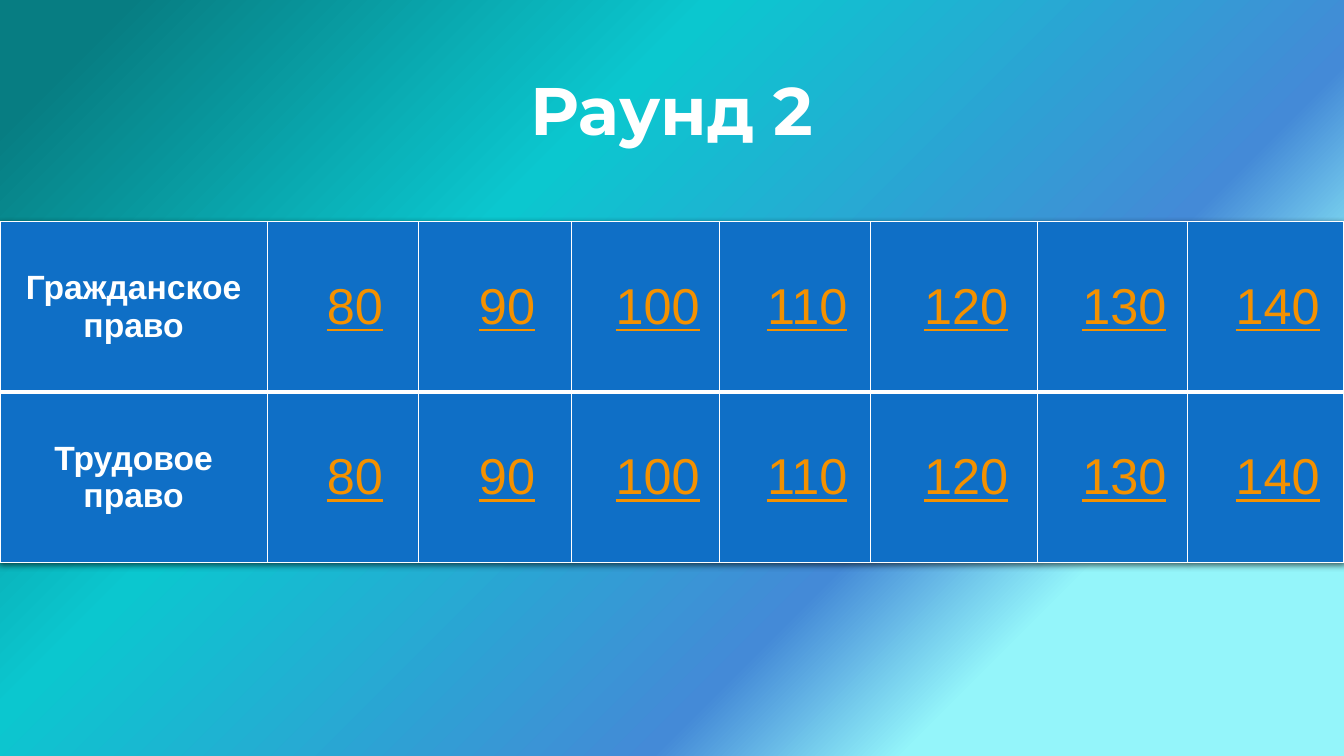
from lxml.etree import SubElement
from pptx import Presentation
from pptx.dml.color import RGBColor
from pptx.enum.text import MSO_ANCHOR, PP_ALIGN
from pptx.oxml import parse_xml
from pptx.oxml.ns import nsdecls, qn
from pptx.util import Pt

COLORS = {
    "white": "FFFFFF", "cell": "0F6FC6", "score": "F49100", "shadow": "000000",
    "ice": "94F5FA", "blue": "448AD7", "cyan": "0BC7CF", "teal": "077D82",
}
BACKDROP = [(21, "ice"), (33, "blue"), (66, "cyan"), (94, "teal")]
TOPICS = ["Гражданское право", "Трудовое право"]
SCORES = range(80, 141, 10)
COL_WIDTHS = [190.8, 108, 109.44, 105.84, 108, 118.8, 107.28, 111.6]
ROW_HEIGHT = 121.68


class Board:
    def __init__(self, prs):
        self.s = prs.slides.add_slide(prs.slide_layouts[6])

    def background(self, stops):
        """Fill the slide with a gradient that starts at its bottom right corner."""
        self.s.background.fill.gradient()
        grad = self.s.element.xpath(".//p:bgPr/a:gradFill")[0]
        gs = "".join(
            f'<a:gs pos="{pos * 1000}"><a:srgbClr val="{COLORS[name]}"/></a:gs>'
            for pos, name in stops)
        grad.getparent().replace(grad, parse_xml(
            f'<a:gradFill {nsdecls("a")} rotWithShape="1"><a:gsLst>{gs}</a:gsLst>'
            '<a:path path="circle"><a:fillToRect l="100000" t="100000"/></a:path>'
            '</a:gradFill>'))

    def label(self, tf, text, size, color, font="Arial", bold=False, underline=False):
        tf.text = text
        p = tf.paragraphs[0]
        p.alignment = PP_ALIGN.CENTER
        f = p.runs[0].font
        f.name, f.size, f.bold, f.underline = font, Pt(size), bold, underline
        f.color.rgb = RGBColor.from_string(COLORS[color])
        return p

    def title(self, text, left, top, width, height):
        tf = self.s.shapes.add_textbox(Pt(left), Pt(top), Pt(width), Pt(height)).text_frame
        tf.word_wrap = True
        tf.vertical_anchor = MSO_ANCHOR.MIDDLE
        p = self.label(tf, text, 48, "white", "Montserrat", bold=True)
        p.line_spacing = 0.9

    def borders(self, cell, widths):
        tcPr = cell._tc.get_or_add_tcPr()
        for i, (side, width) in enumerate(widths.items()):
            tcPr.insert(i, parse_xml(
                f'<a:ln{side} {nsdecls("a")} w="{Pt(width)}"><a:solidFill>'
                f'<a:srgbClr val="{COLORS["white"]}"/></a:solidFill></a:ln{side}>'))

    def shadow(self, table):
        effects = SubElement(table._tbl.tblPr, qn("a:effectLst"))
        effects.append(parse_xml(
            f'<a:outerShdw {nsdecls("a")} blurRad="{Pt(4.5)}" dist="{Pt(1.5)}" '
            f'dir="5400000"><a:srgbClr val="{COLORS["shadow"]}">'
            '<a:alpha val="63000"/></a:srgbClr></a:outerShdw>'))
        table._tbl.tblPr.insert(0, effects)

    def score_table(self, topics, scores, top):
        rows, cols = len(topics), len(COL_WIDTHS)
        table = self.s.shapes.add_table(
            rows, cols, 0, Pt(top), Pt(sum(COL_WIDTHS)), Pt(rows * ROW_HEIGHT)).table
        table.first_row = table.horz_banding = False
        self.shadow(table)
        for column, width in zip(table.columns, COL_WIDTHS):
            column.width = Pt(width)
        for r, topic in enumerate(topics):
            table.rows[r].height = Pt(ROW_HEIGHT)
            for c, text in enumerate([topic, *map(str, scores)]):
                cell = table.cell(r, c)
                cell.vertical_anchor = MSO_ANCHOR.MIDDLE
                cell.fill.solid()
                cell.fill.fore_color.rgb = RGBColor.from_string(COLORS["cell"])
                self.borders(cell, {"L": 1, "R": 1, "T": 3 if r else 1,
                                    "B": 3 if r < rows - 1 else 1})
                if c == 0:
                    self.label(cell.text_frame, text, 24, "white", bold=True)
                else:
                    p = self.label(cell.text_frame, text, 36, "score", underline=True)
                    p.space_before = p.space_after = Pt(6)
                    pPr = p._p.get_or_add_pPr()
                    pPr.set("marL", str(Pt(14.4)))
                    pPr.set("indent", str(Pt(2.88)))


def main():
    prs = Presentation()
    prs.slide_width, prs.slide_height = Pt(960), Pt(540)
    board = Board(prs)
    board.background(BACKDROP)
    board.title("Раунд 2", 66, 28.8, 828, 104.4)
    board.score_table(TOPICS, SCORES, 158.4)
    prs.save("out.pptx")


if __name__ == "__main__":
    main()
